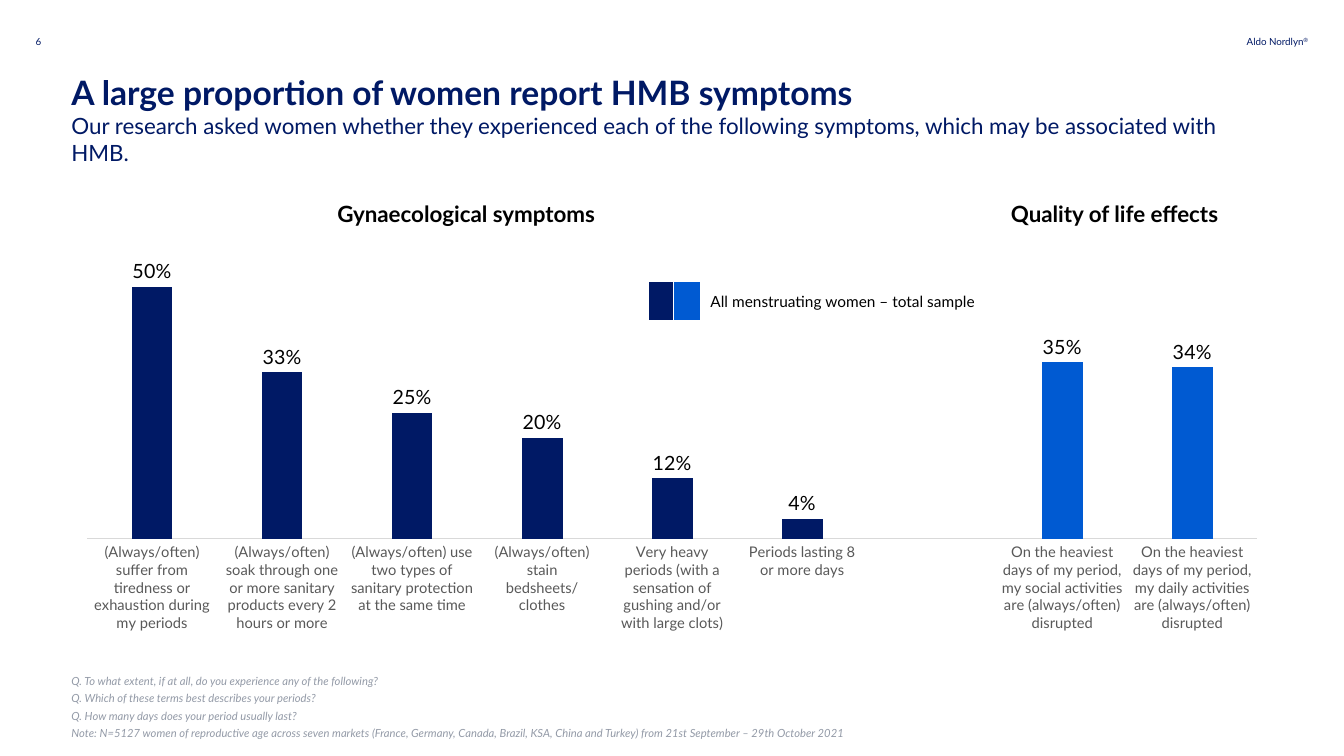
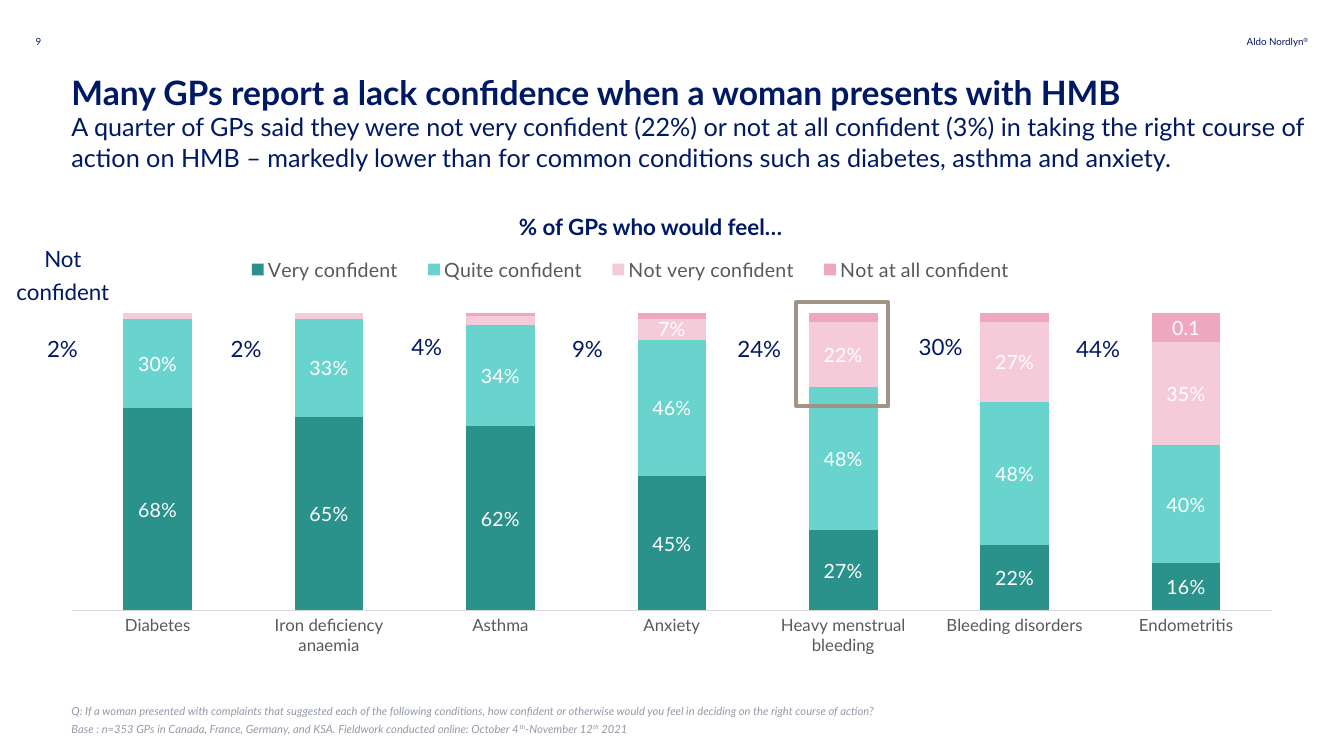
from lxml.etree import SubElement
from pptx import Presentation
from pptx.chart.data import CategoryChartData
from pptx.dml.color import RGBColor
from pptx.enum.chart import XL_CHART_TYPE, XL_LABEL_POSITION, XL_LEGEND_POSITION, XL_TICK_MARK
from pptx.enum.shapes import MSO_SHAPE
from pptx.enum.text import MSO_ANCHOR, MSO_AUTO_SIZE, PP_ALIGN
from pptx.oxml.ns import qn
from pptx.util import Cm, Pt

FONT = "Lato"
NAVY, BLUE, BLACK, WHITE = "001965", "005AD2", "000000", "FFFFFF"
GREY, AXIS_TEXT, AXIS_LINE, FRAME = "939AA7", "595959", "D9D9D9", "A19486"
LEFT, CENTER, RIGHT = PP_ALIGN.LEFT, PP_ALIGN.CENTER, PP_ALIGN.RIGHT
rgb = RGBColor.from_string


def write(para, text, size, colour, align=LEFT, bold=False, italic=False, spacing=1.0):
    para.alignment, para.line_spacing = align, spacing
    font = para.font
    font.name, font.size, font.bold, font.italic = FONT, Pt(size), bold, italic
    font.color.rgb = rgb(colour)
    for number, part in enumerate(text.split("^")):
        span = para.add_run()
        span.text = part
        if number % 2:
            span._r.get_or_add_rPr().set("baseline", "30000")


def place_in_chart(element, index, bounds, inner=False):
    for old in element.findall(qn("c:layout")):
        element.remove(old)
    layout = SubElement(element, qn("c:layout"))
    element.insert(index, layout)
    manual = SubElement(layout, qn("c:manualLayout"))
    if inner:
        SubElement(manual, qn("c:layoutTarget")).set("val", "inner")
    for mode in ("xMode", "yMode"):
        SubElement(manual, qn("c:" + mode)).set("val", "edge")
    for side, value in zip("xywh", bounds):
        SubElement(manual, qn("c:" + side)).set("val", str(value))


shared_labels = [("Aldo Nordlyn^®^", 31.17, 0.9, 1.8, 0.3, 7, NAVY, RIGHT, False, 1.0)]
confidence_gaps = [
    ("2%", 0.9, 8.3), ("2%", 5.53, 8.3), ("4%", 10.08, 8.25), ("9%", 14.13, 8.3),
    ("24%", 18.46, 8.3), ("30%", 23.03, 8.25), ("44%", 27, 8.3),
]

pages = [
    {
        "number": "6",
        "title": "A large proportion of women report HMB symptoms",
        "subtitle": "Our research asked women whether they experienced each of the following symptoms, which may be associated with HMB.",
        "title_width": 30.28,
        "subtitle_size": 16,
        "notes_top": 17.75,
        "notes": [
            "Q. To what extent, if at all, do you experience any of the following?",
            "Q. Which of these terms best describes your periods?",
            "Q. How many days does your period usually last?",
            "Note: N=5127 women of reproductive age across seven markets (France, Germany, Canada, Brazil, KSA, China and Turkey) from 21st September – 29th October 2021",
        ],
        "labels": [
            ("Gynaecological symptoms", 6.55, 5.05, 10.4, 0.69, 16, BLACK, CENTER, True, 1.0),
            ("Quality of life effects", 22.89, 5.05, 10.4, 0.69, 16, BLACK, CENTER, True, 1.0),
        ],
        "kind": XL_CHART_TYPE.COLUMN_CLUSTERED,
        "chart_top": 5.4, "chart_height": 11.65,
        "plot": (0.013, 0.048, 0.974, 0.654),
        "gap": 219, "overlap": -27, "maximum": 0.6, "axis_size": 10.5,
        "label_place": XL_LABEL_POSITION.OUTSIDE_END, "label_colour": BLACK,
        "categories": [
            "(Always/often) suffer from tiredness or exhaustion during my periods",
            "(Always/often) soak through one or more sanitary products every 2 hours or more",
            "(Always/often) use two types of sanitary protection at the same time",
            "(Always/often) stain bedsheets/clothes",
            "Very heavy periods (with a sensation of gushing and/or with large clots)",
            "Periods lasting 8 or more days",
            "",
            "On the heaviest days of my period, my social activities are (always/often) disrupted",
            "On the heaviest days of my period, my daily activities are (always/often) disrupted",
        ],
        "series": [
            ("Series 1", NAVY, "0%", [], [0.5, 0.33, 0.25, 0.2, 0.12, 0.04, None, 0.35, 0.34]),
        ],
    },
    {
        "number": "9",
        "title": "Many GPs report a lack confidence when a woman presents with HMB",
        "subtitle": "A quarter of GPs said they were not very confident (22%) or not at all confident (3%) in taking the right course of action on HMB – markedly lower than for common conditions such as diabetes, asthma and anxiety.",
        "title_width": 31.57,
        "subtitle_size": 18,
        "notes_top": 17.63,
        "notes": [
            "Q: If a woman presented with complaints that suggested each of the following conditions, how confident or otherwise would you feel in deciding on the right course of action?",
            "Base : n=353 GPs in Canada, France, Germany, and KSA. Fieldwork conducted online: October 4^th^-November 12^th^ 2021",
        ],
        "labels": [
            ("% of GPs who would feel…", 4.47, 5.36, 23.85, 0.69, 16, NAVY, CENTER, True, 1.0),
            ("Not confident", 0.33, 6.05, 2.51, 1.57, 16, NAVY, CENTER, False, 1.2),
        ] + [
            (text, left, top, 1.35, 0.76, 16, NAVY, CENTER, False, 1.2)
            for text, left, top in confidence_gaps
        ],
        "kind": XL_CHART_TYPE.COLUMN_STACKED_100,
        "chart_top": 5.87, "chart_height": 11.56,
        "plot": (0, 0.174, 0.999, 0.649),
        "gap": 150, "overlap": 100, "maximum": 1, "axis_size": 12,
        "label_place": XL_LABEL_POSITION.CENTER, "label_colour": WHITE,
        "categories": [
            "Diabetes", "Iron deficiency anaemia", "Asthma", "Anxiety",
            "Heavy menstrual bleeding", "Bleeding disorders", "Endometritis",
        ],
        "series": [
            ("Very confident", "2A918B", "0%", [], [0.68, 0.65, 0.62, 0.45, 0.27, 0.22, 0.16]),
            ("Quite confident", "69D3CD", "0%", [], [0.3, 0.33, 0.34, 0.46, 0.48, 0.48, 0.4]),
            ("Not very confident", "F5CAD9", "0%", [0, 1, 2], [0.02, 0.02, 0.03, 0.07, 0.22, 0.27, 0.35]),
            ("Not at all confident", "EEA7BF", "General", [2, 3, 4, 5], [None, None, 0.01, 0.02, 0.03, 0.03, 0.1]),
        ],
    },
]

deck = Presentation()
deck.slide_width, deck.slide_height = Cm(33.87), Cm(19.05)
charts = []

for content in pages:
    page = deck.slides.add_slide(deck.slide_layouts[1])
    title, notes = page.shapes.title, page.placeholders[1]
    title.left, title.top, title.width, title.height = Cm(1.8), Cm(1.8), Cm(content["title_width"]), Cm(3.6)
    notes.left, notes.top, notes.width, notes.height = Cm(1.8), Cm(content["notes_top"]), Cm(24.03), Cm(0.9)

    labels = shared_labels + [(content["number"], 0.9, 0.9, 0.9, 0.36, 7, NAVY, LEFT, False, 1.0)]
    frames = [title.text_frame, notes.text_frame]
    for text, left, top, width, height, size, colour, align, bold, spacing in labels + content["labels"]:
        box = page.shapes.add_textbox(Cm(left), Cm(top), Cm(width), Cm(height))
        write(box.text_frame.paragraphs[0], text, size, colour, align, bold, spacing=spacing)
        frames.append(box.text_frame)
    for frame in frames:
        frame.margin_left = frame.margin_top = frame.margin_right = frame.margin_bottom = 0
        frame.word_wrap, frame.auto_size = True, MSO_AUTO_SIZE.NONE
        frame.vertical_anchor = MSO_ANCHOR.TOP
    notes.text_frame.vertical_anchor = MSO_ANCHOR.BOTTOM

    para = title.text_frame.paragraphs[0]
    write(para, content["title"], 24, NAVY, bold=True)
    para.add_line_break()
    span = para.add_run()
    span.text = content["subtitle"]
    span.font.size, span.font.bold = Pt(content["subtitle_size"]), False

    for number, text in enumerate(content["notes"]):
        para = notes.text_frame.add_paragraph() if number else notes.text_frame.paragraphs[0]
        properties = para._p.get_or_add_pPr()
        properties.set("marL", "0")
        properties.set("indent", "0")
        SubElement(properties, qn("a:buNone"))
        para.space_before = Pt(3 if number else 0)
        write(para, text, 8, GREY, italic=True)

    data = CategoryChartData(number_format="0%")
    data.categories = content["categories"]
    for name, colour, number_format, hidden, values in content["series"]:
        data.add_series(name, values, number_format)
    chart = page.shapes.add_chart(
        content["kind"], Cm(1.8), Cm(content["chart_top"]), Cm(30.28), Cm(content["chart_height"]), data
    ).chart
    charts.append(chart)
    chart.has_title = chart.has_legend = False
    chart.font.name, chart.font.size = FONT, Pt(10)
    chart.font.color.rgb = rgb(BLACK)
    place_in_chart(chart._chartSpace.chart.plotArea, 0, content["plot"], inner=True)

    value_axis, category_axis = chart.value_axis, chart.category_axis
    value_axis.visible = value_axis.has_major_gridlines = False
    value_axis.minimum_scale, value_axis.maximum_scale = 0, content["maximum"]
    category_axis.major_tick_mark = XL_TICK_MARK.NONE
    category_axis.format.line.color.rgb = rgb(AXIS_LINE)
    category_axis.format.line.width = Pt(0.75)
    axis_font = category_axis.tick_labels.font
    axis_font.name, axis_font.size = FONT, Pt(content["axis_size"])
    axis_font.color.rgb = rgb(AXIS_TEXT)

    plot = chart.plots[0]
    plot.gap_width, plot.overlap, plot.vary_by_categories = content["gap"], content["overlap"], False
    for series, (name, colour, number_format, hidden, values) in zip(plot.series, content["series"]):
        series.format.fill.solid()
        series.format.fill.fore_color.rgb = rgb(colour)
        value_labels = series.data_labels
        value_labels.show_value = True
        value_labels.position = content["label_place"]
        value_labels.number_format, value_labels.number_format_is_linked = number_format, False
        value_labels.font.name, value_labels.font.size = FONT, Pt(14)
        value_labels.font.color.rgb = rgb(content["label_colour"])
        for order, point in enumerate(hidden):
            label = SubElement(value_labels._element, qn("c:dLbl"))
            value_labels._element.insert(order, label)
            SubElement(label, qn("c:idx")).set("val", str(point))
            SubElement(label, qn("c:delete")).set("val", "1")

symptoms_page, confidence_page = deck.slides
symptoms_chart, confidence_chart = charts

for index in (7, 8):
    fill = symptoms_chart.plots[0].series[0].points[index].format.fill
    fill.solid()
    fill.fore_color.rgb = rgb(BLUE)

key = symptoms_page.shapes.add_table(1, 3, Cm(16.33), Cm(7.09), Cm(9.5), Cm(1.02)).table
key.first_row = key.horz_banding = False
for column, width, colour in zip(key.columns, (0.64, 0.68, 8.18), (NAVY, BLUE, WHITE)):
    column.width = Cm(width)
for cell, colour in zip(key.rows[0].cells, (NAVY, BLUE, WHITE)):
    properties = cell._tc.get_or_add_tcPr()
    for side, weight in (("lnL", 1), ("lnR", 1), ("lnT", 1), ("lnB", 3)):
        border = SubElement(properties, qn("a:" + side))
        border.set("w", str(Pt(weight)))
        SubElement(SubElement(border, qn("a:solidFill")), qn("a:srgbClr")).set("val", WHITE)
    cell.fill.solid()
    cell.fill.fore_color.rgb = rgb(colour)
    cell.vertical_anchor = MSO_ANCHOR.MIDDLE
write(key.cell(0, 2).text_frame.paragraphs[0], "All menstruating women – total sample", 11, BLACK)

confidence_chart.has_legend = True
legend = confidence_chart.legend
legend.position, legend.include_in_layout = XL_LEGEND_POSITION.BOTTOM, False
legend.font.name, legend.font.size = FONT, Pt(14)
legend.font.color.rgb = rgb(AXIS_TEXT)
place_in_chart(legend._element, 1, (0.13, 0.04, 0.67, 0.08))

highlight = confidence_page.shapes.add_shape(MSO_SHAPE.RECTANGLE, Cm(20.07), Cm(7.62), Cm(2.31), Cm(2.62))
highlight.shadow.inherit = False
highlight.fill.background()
highlight.line.color.rgb = rgb(FRAME)
highlight.line.width = Pt(3)

deck.save("out.pptx")
